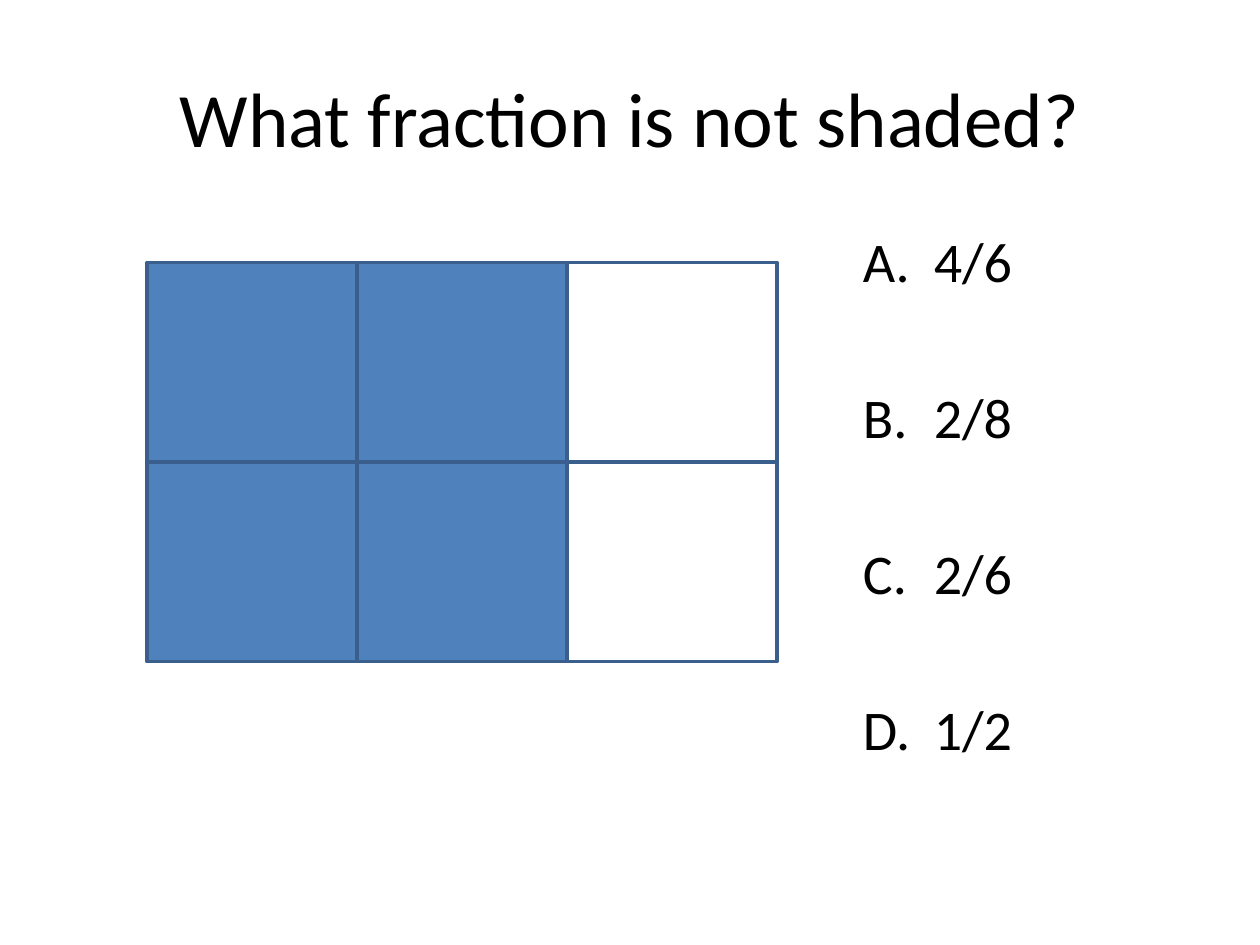
"""Build a quiz slide asking which fraction of a grid is not shaded."""
from lxml.etree import SubElement
from pptx import Presentation
from pptx.dml.color import RGBColor
from pptx.enum.shapes import MSO_SHAPE
from pptx.enum.text import MSO_ANCHOR, PP_ALIGN
from pptx.oxml.ns import qn
from pptx.util import Pt

TITLE = "What fraction is not shaded?"
ANSWERS = ["4/6", "2/8", "2/6", "1/2"]
GRID = [
    [True, True, False],
    [True, True, False],
]

THEME = {
    "shaded": RGBColor(0x4F, 0x81, 0xBD),
    "plain": RGBColor(0xFF, 0xFF, 0xFF),
    "outline": RGBColor(0x3A, 0x5F, 0x8C),
    "text": RGBColor(0, 0, 0),
    "font": "Calibri",
    "title_size": Pt(44),
    "answer_size": Pt(32),
}
TITLE_BOX = (36, 21.6, 648, 90)
ANSWER_BOX = (486, 126, 198, 356.4)
ANSWER_GAP = 50.7
ANSWER_INDENT = 40.5
GRID_LEFT, GRID_TOP = 84, 150
CELL_WIDTH, CELL_HEIGHT = 120, 114


def format_font(font, size):
    values = {"name": THEME["font"], "size": size, "bold": False}
    for name, value in values.items():
        setattr(font, name, value)
    font.color.rgb = THEME["text"]


def add_title(slide):
    title = slide.shapes.title
    for name, value in zip(("left", "top", "width", "height"), TITLE_BOX):
        setattr(title, name, Pt(value))
    title.text_frame.text = TITLE
    title.text_frame.vertical_anchor = MSO_ANCHOR.MIDDLE
    paragraph = title.text_frame.paragraphs[0]
    paragraph.alignment = PP_ALIGN.CENTER
    format_font(paragraph.runs[0].font, THEME["title_size"])


def add_answers(slide):
    text_frame = slide.shapes.add_textbox(*map(Pt, ANSWER_BOX)).text_frame
    text_frame.word_wrap = True
    for index, answer in enumerate(ANSWERS):
        paragraph = text_frame.add_paragraph() if index else text_frame.paragraphs[0]
        if index:
            paragraph.space_before = Pt(ANSWER_GAP)
        properties = paragraph._p.get_or_add_pPr()
        properties.set("marL", str(Pt(ANSWER_INDENT)))
        properties.set("indent", str(-Pt(ANSWER_INDENT)))
        SubElement(properties, qn("a:buFont"), typeface=THEME["font"])
        SubElement(properties, qn("a:buAutoNum"), type="alphaUcPeriod")
        run = paragraph.add_run()
        run.text = answer
        format_font(run.font, THEME["answer_size"])


def add_grid(slide):
    for row, cells in enumerate(GRID):
        for column, shaded in enumerate(cells):
            shape = slide.shapes.add_shape(
                MSO_SHAPE.RECTANGLE,
                Pt(GRID_LEFT + column * CELL_WIDTH),
                Pt(GRID_TOP + row * CELL_HEIGHT),
                Pt(CELL_WIDTH),
                Pt(CELL_HEIGHT),
            )
            shape.shadow.inherit = False
            shape.fill.solid()
            shape.fill.fore_color.rgb = THEME["shaded" if shaded else "plain"]
            shape.line.color.rgb = THEME["outline"]
            shape.line.width = Pt(2)


def main():
    presentation = Presentation()
    presentation.slide_width, presentation.slide_height = Pt(720), Pt(540)
    slide = presentation.slides.add_slide(presentation.slide_layouts[5])
    add_title(slide)
    add_answers(slide)
    add_grid(slide)
    presentation.save("out.pptx")


if __name__ == "__main__":
    main()
